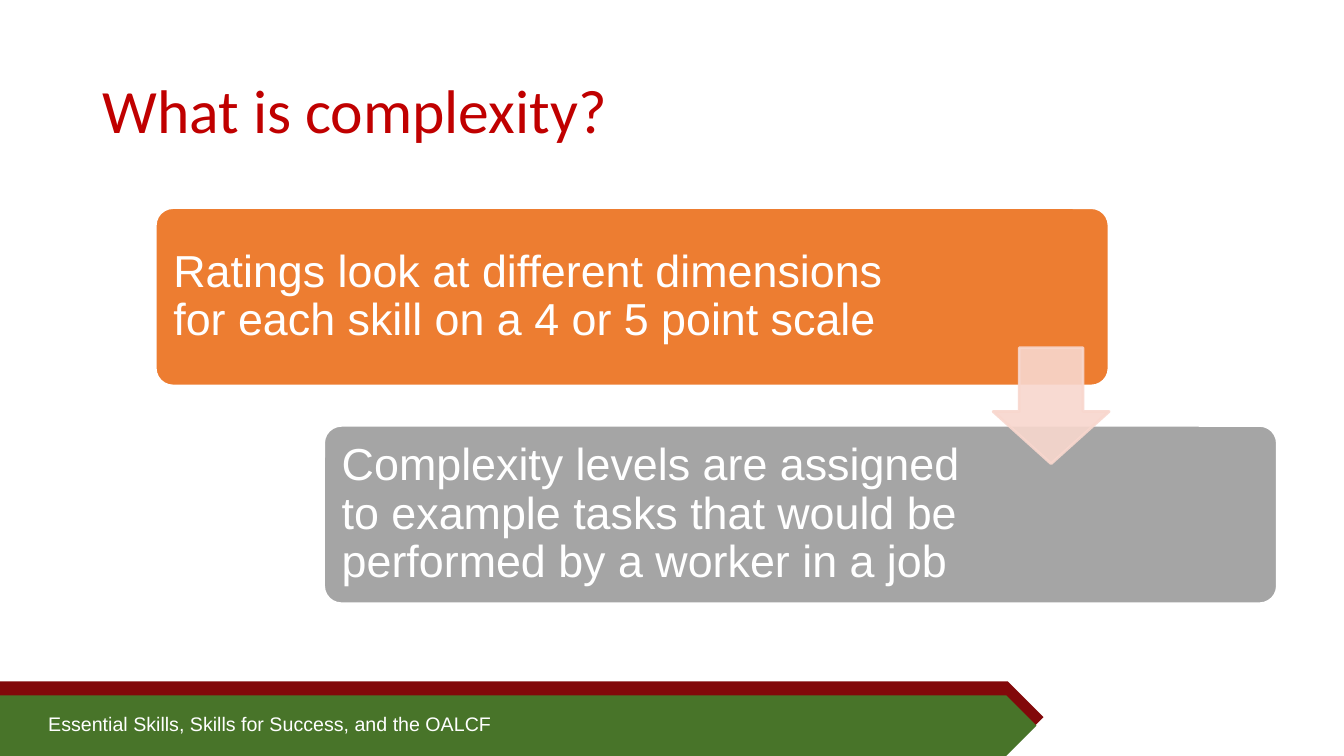
from dataclasses import dataclass

import lxml.etree
import pptx
import pptx.dml.color
import pptx.enum.shapes
import pptx.enum.text
import pptx.oxml.ns
import pptx.shapes.autoshape
import pptx.slide
import pptx.util

Inches = pptx.util.Inches
Shape = pptx.enum.shapes.MSO_SHAPE
Anchor = pptx.enum.text.MSO_ANCHOR


@dataclass(frozen=True)
class Theme:
    title: str = "C00000"
    rating: str = "ED7D31"
    complexity: str = "A5A5A5"
    arrow: str = "F8D7CE"
    footer: str = "487429"
    footer_edge: str = "82080A"
    white: str = "FFFFFF"
    heading_font: str = "Calibri"
    body_font: str = "Arial"
    title_size: int = 44
    step_size: int = 32
    footer_size: int = 14
    outline: int = 2


@dataclass(frozen=True)
class Box:
    left: float
    top: float
    width: float
    height: float

    def lengths(self) -> tuple[int, ...]:
        return tuple(Inches(v) for v in (self.left, self.top, self.width, self.height))


@dataclass(frozen=True)
class Block:
    kind: Shape
    box: Box
    color: str
    adjustments: tuple[float, ...]
    outlined: str | None = None
    opacity: int = 100


@dataclass(frozen=True)
class Label:
    text: str
    box: Box
    font: str
    size: int
    color: str
    inset: tuple[float, float] = (0.1, 0.05)
    anchor: Anchor = Anchor.MIDDLE
    line_spacing: float = 0.9


@dataclass(frozen=True)
class Step:
    text: str
    color: str
    text_width: float


THEME = Theme()
STEPS = (
    Step("Ratings look at different dimensions for each skill on a 4 or 5 point scale",
         THEME.rating, 7.63),
    Step("Complexity levels are assigned to example tasks that would be performed by a worker in a job",
         THEME.complexity, 6.54),
)
STEP_BOX = Box(1.54, 2.06, 9.46, 1.77)
STEP_SHIFT = (1.67, 2.16)
STEP_PADDING = 0.05
FOOTER = (
    Block(Shape.PENTAGON, Box(0, 6.76, 10.35, 0.71), THEME.footer_edge, (0.5,)),
    Block(Shape.PENTAGON, Box(0, 6.9, 10.28, 0.6), THEME.footer, (0.5,)),
)
FOOTER_LABEL = Label("Essential Skills, Skills for Success, and the OALCF", Box(0.38, 7.01, 9.37, 0.34),
                     THEME.body_font, THEME.footer_size, THEME.white,
                     anchor=Anchor.TOP, line_spacing=1.0)
TITLE = Label("What is complexity?", Box(0.92, 0.4, 11.5, 1.45),
              THEME.heading_font, THEME.title_size, THEME.title)
ARROW = Block(Shape.DOWN_ARROW, Box(9.85, 3.45, 1.15, 1.15), THEME.arrow, (0.55, 0.45),
              THEME.arrow, 90)


def rgb(color: str) -> pptx.dml.color.RGBColor:
    return pptx.dml.color.RGBColor.from_string(color)


def set_opacity(shape: pptx.shapes.autoshape.Shape, percent: int) -> None:
    qn = pptx.oxml.ns.qn
    for color in shape.element.spPr.iter(qn("a:srgbClr")):
        lxml.etree.SubElement(color, qn("a:alpha")).set("val", str(percent * 1000))


def draw_block(slide: pptx.slide.Slide, block: Block) -> None:
    shape = slide.shapes.add_shape(block.kind, *block.box.lengths())
    shape.shadow.inherit = False
    for index, value in enumerate(block.adjustments):
        shape.adjustments[index] = value
    shape.fill.solid()
    shape.fill.fore_color.rgb = rgb(block.color)
    if block.outlined:
        shape.line.color.rgb = rgb(block.outlined)
        shape.line.width = pptx.util.Pt(THEME.outline)
    else:
        shape.line.fill.background()
    if block.opacity < 100:
        set_opacity(shape, block.opacity)


def draw_label(slide: pptx.slide.Slide, label: Label) -> None:
    frame = slide.shapes.add_textbox(*label.box.lengths()).text_frame
    frame.word_wrap = True
    frame.vertical_anchor = label.anchor
    frame.margin_left = frame.margin_right = Inches(label.inset[0])
    frame.margin_top = frame.margin_bottom = Inches(label.inset[1])
    frame.text = label.text
    paragraph = frame.paragraphs[0]
    paragraph.line_spacing = label.line_spacing
    font = paragraph.runs[0].font
    font.name = label.font
    font.size = pptx.util.Pt(label.size)
    font.color.rgb = rgb(label.color)


def draw_step(slide: pptx.slide.Slide, step: Step, index: int) -> None:
    left = STEP_BOX.left + index * STEP_SHIFT[0]
    top = STEP_BOX.top + index * STEP_SHIFT[1]
    card = Box(left, top, STEP_BOX.width, STEP_BOX.height)
    text_area = Box(left + STEP_PADDING, top + STEP_PADDING,
                    step.text_width, STEP_BOX.height - 2 * STEP_PADDING)
    draw_block(slide, Block(Shape.ROUNDED_RECTANGLE, card, step.color, (0.1,), THEME.white))
    draw_label(slide, Label(step.text, text_area, THEME.body_font, THEME.step_size,
                            THEME.white, (0.13, 0.13)))


def main() -> None:
    """Build the complexity slide and save it."""
    deck = pptx.Presentation()
    deck.slide_width, deck.slide_height = Inches(13.33), Inches(7.5)
    slide = deck.slides.add_slide(deck.slide_layouts[6])
    for band in FOOTER:
        draw_block(slide, band)
    draw_label(slide, FOOTER_LABEL)
    draw_label(slide, TITLE)
    for index, step in enumerate(STEPS):
        draw_step(slide, step, index)
    draw_block(slide, ARROW)
    deck.save("out.pptx")


if __name__ == "__main__":
    main()
